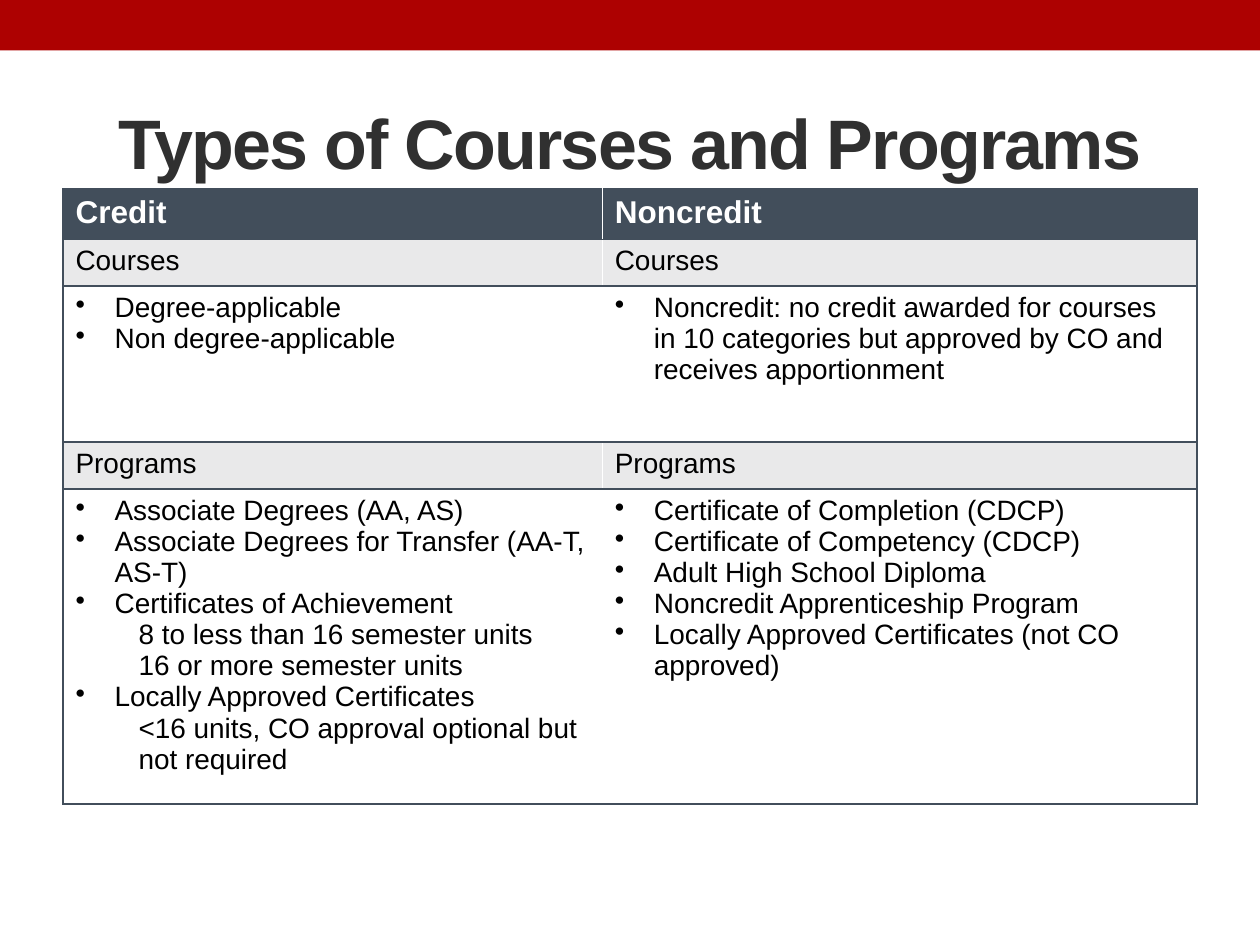
from lxml import etree
from pptx import Presentation
from pptx.dml.color import RGBColor
from pptx.enum import shapes, text
from pptx.oxml.ns import qn
from pptx.util import Inches, Pt

RED = RGBColor(0xAD, 0x01, 0x01)
CHARCOAL = RGBColor(0x30, 0x30, 0x30)
SLATE = RGBColor(0x42, 0x4E, 0x5B)
PALE = RGBColor(0xE9, 0xE9, 0xEA)
WHITE = RGBColor(0xFF, 0xFF, 0xFF)
BLACK = RGBColor(0, 0, 0)

COLUMN_WIDTHS = [4.28, 4.72]
# Each row: height, kind, credit lines, noncredit lines.
# A detail line belongs to the bullet above it and starts with a tab.
ROWS = [
    (0.4, "header", ["Credit"], ["Noncredit"]),
    (0.37, "section", ["Courses"], ["Courses"]),
    (1.24, "list",
     ["Degree-applicable", "Non degree-applicable"],
     ["Noncredit: no credit awarded for courses in 10 categories "
      "but approved by CO and receives apportionment"]),
    (0.37, "section", ["Programs"], ["Programs"]),
    (2.5, "list",
     ["Associate Degrees (AA, AS)",
      "Associate Degrees for Transfer (AA-T, AS-T)",
      "Certificates of Achievement",
      "\t8 to less than 16 semester units",
      "\t16 or more semester units",
      "Locally Approved Certificates",
      "\t<16 units, CO approval optional but not required"],
     ["Certificate of Completion (CDCP)",
      "Certificate of Competency (CDCP)",
      "Adult High School Diploma",
      "Noncredit Apprenticeship Program",
      "Locally Approved Certificates (not CO approved)"]),
]
ROW_STYLES = {
    "header": (SLATE, dict(size=18, color=WHITE, bold=True)),
    "section": (PALE, dict(size=16)),
    "list": (WHITE, dict(size=16)),
}


def write(paragraph, words, size=16, color=BLACK, bold=False, align=None,
          spacing=None):
    run = paragraph.add_run()
    run.text = words
    run.font.name = "Arial"
    run.font.size = Pt(size)
    run.font.bold = bold
    run.font.color.rgb = color
    paragraph.alignment = align
    if spacing is not None:
        run.font._element.set("spc", str(int(spacing * 100)))


def indent(paragraph, left, first=0, bullet=None):
    properties = paragraph._p.get_or_add_pPr()
    properties.set("marL", str(Inches(left)))
    properties.set("indent", str(Inches(first)))
    if bullet:
        etree.SubElement(properties, qn("a:buChar")).set("char", bullet)
    else:
        etree.SubElement(properties, qn("a:buNone"))


def set_borders(cell, sides):
    """Draw the given sides, listed in the order L, R, T, B."""
    properties = cell._tc.get_or_add_tcPr()
    for position, side in enumerate(sides):
        line = etree.Element(qn(f"a:ln{side}"), w=str(Pt(1)))
        fill = etree.SubElement(line, qn("a:solidFill"))
        etree.SubElement(fill, qn("a:srgbClr"), val=str(SLATE))
        properties.insert(position, line)


def fill_cell(cell, lines, kind, sides):
    background, style = ROW_STYLES[kind]
    cell.fill.solid()
    cell.fill.fore_color.rgb = background
    set_borders(cell, sides)
    frame = cell.text_frame
    for number, line in enumerate(lines):
        paragraph = frame.add_paragraph() if number else frame.paragraphs[0]
        if line.startswith("\t"):
            paragraph.level = 1
            indent(paragraph, 0.5)
        elif kind == "list":
            indent(paragraph, 0.31, -0.31, bullet="•")
        write(paragraph, line.strip(), **style)


def add_banner(slide):
    banner = slide.shapes.add_shape(shapes.MSO_SHAPE.RECTANGLE, 0, 0,
                                    Inches(10), Inches(0.4))
    banner.shadow.inherit = False
    banner.fill.solid()
    banner.fill.fore_color.rgb = RED
    banner.line.fill.background()


def add_title(slide, words):
    title = slide.shapes.add_textbox(Inches(0.5), Inches(0.58),
                                     Inches(9), Inches(1.08))
    frame = title.text_frame
    frame.word_wrap = True
    frame.vertical_anchor = text.MSO_ANCHOR.MIDDLE
    write(frame.paragraphs[0], words, size=40, color=CHARCOAL, bold=True,
          align=text.PP_ALIGN.CENTER, spacing=-1)


def add_comparison(slide):
    height = sum(row[0] for row in ROWS)
    comparison = slide.shapes.add_table(
        len(ROWS), len(COLUMN_WIDTHS), Inches(0.5), Inches(1.5),
        Inches(sum(COLUMN_WIDTHS)), Inches(height)).table
    for column, width in zip(comparison.columns, COLUMN_WIDTHS):
        column.width = Inches(width)
    for number, (row_height, kind, credit, noncredit) in enumerate(ROWS):
        comparison.rows[number].height = Inches(row_height)
        fill_cell(comparison.cell(number, 0), credit, kind, "LTB")
        fill_cell(comparison.cell(number, 1), noncredit, kind, "RTB")


def main():
    deck = Presentation()
    deck.slide_width, deck.slide_height = Inches(10), Inches(7.5)
    slide = deck.slides.add_slide(deck.slide_layouts[6])

    # Banner and heading
    add_banner(slide)
    add_title(slide, "Types of Courses and Programs")

    # Credit and noncredit side by side
    add_comparison(slide)
    deck.save("out.pptx")


if __name__ == "__main__":
    main()
